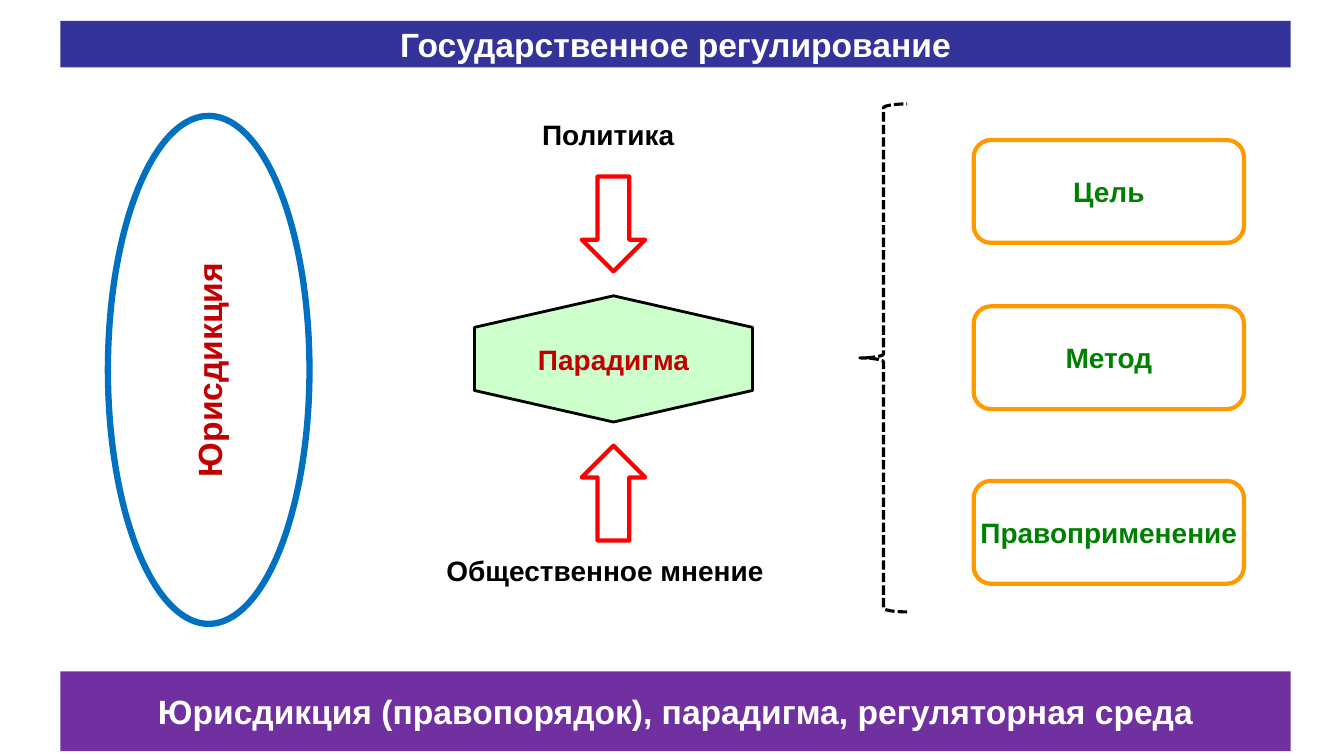
import pptx
import pptx.util
import pptx.dml.color
import pptx.enum.dml
import pptx.enum.shapes
import pptx.enum.text

Cm = pptx.util.Cm
Pt = pptx.util.Pt
Shape = pptx.enum.shapes.MSO_SHAPE
Align = pptx.enum.text.PP_ALIGN
Anchor = pptx.enum.text.MSO_ANCHOR


def color(value):
    return pptx.dml.color.RGBColor.from_string(value)


class SlideBuilder:
    font = "Arial"
    heading_size = 24
    label_size = 20
    crimson = "C00000"
    white = "FFFFFF"
    black = "000000"

    def __init__(self, slide):
        self.slide = slide

    def caption(self, shape, text, size, text_color, align=Align.CENTER, wrap=True):
        frame = shape.text_frame
        frame.text = text
        frame.word_wrap = wrap
        para = frame.paragraphs[0]
        para.alignment = align
        span = para.runs[0]
        span.font.name = self.font
        span.font.size = Pt(size)
        span.font.bold = True
        span.font.color.rgb = color(text_color)

    def shape(self, kind, left, top, width, height, fill=None, line=None,
              weight=1, rotation=0):
        shape = self.slide.shapes.add_shape(
            kind, Cm(left), Cm(top), Cm(width), Cm(height))
        shape.shadow.inherit = False
        shape.rotation = rotation
        if fill:
            shape.fill.solid()
            shape.fill.fore_color.rgb = color(fill)
        else:
            shape.fill.background()
        if line:
            shape.line.color.rgb = color(line)
            shape.line.width = Pt(weight)
        else:
            shape.line.fill.background()
        shape.text_frame.vertical_anchor = Anchor.MIDDLE
        return shape

    def banner(self, text, top, height, fill):
        banner = self.shape(Shape.RECTANGLE, 1.52, top, 31.01, height, fill)
        self.caption(banner, text, self.heading_size, self.white)

    def jurisdiction(self, text):
        oval = self.shape(Shape.OVAL, -1.14, 6.78, 12.8, 5.08,
                          line="0070C0", weight=4.5, rotation=270)
        self.caption(oval, text, self.heading_size, self.crimson)

    def instrument(self, text, top):
        box = self.shape(Shape.FLOWCHART_ALTERNATE_PROCESS, 24.54, top, 6.81, 2.59,
                         line="FF9900", weight=3)
        self.caption(box, text, self.label_size, "008000", wrap=False)

    def paradigm(self, text):
        hexagon = self.shape(Shape.HEXAGON, 13.87, 5.54, 3.18, 7.01,
                             "CCFFCC", self.black, 2, 90)
        self.caption(hexagon, text, self.label_size, self.crimson)
        hexagon.element.txBody.bodyPr.set("vert", "vert270")

    def arrow(self, top, rotation):
        self.shape(Shape.DOWN_ARROW, 14.66, top, 1.6, 2.39,
                   self.white, "FF0000", 3, rotation)

    def brace(self):
        brace = self.shape(Shape.LEFT_BRACE, 21.67, 2.62, 1.19, 12.8,
                           line=self.black, weight=2.25)
        brace.line.dash_style = pptx.enum.dml.MSO_LINE.SQUARE_DOT

    def label(self, text, left, top, width):
        box = self.slide.shapes.add_textbox(Cm(left), Cm(top), Cm(width), Cm(1.12))
        self.caption(box, text, self.label_size, self.black, Align.LEFT)
        box.text_frame.auto_size = pptx.enum.text.MSO_AUTO_SIZE.SHAPE_TO_FIT_TEXT


def main():
    deck = pptx.Presentation()
    deck.slide_width = Cm(33.87)
    deck.slide_height = Cm(19.05)
    page = SlideBuilder(deck.slides.add_slide(deck.slide_layouts[6]))

    page.banner("Государственное регулирование", 0.53, 1.17, "333399")
    page.jurisdiction("Юрисдикция")
    page.banner("Юрисдикция (правопорядок), парадигма, регуляторная среда",
                16.92, 2.01, "7030A0")
    for text, top in (("Цель", 3.53), ("Метод", 7.72), ("Правоприменение", 12.12)):
        page.instrument(text, top)
    page.paradigm("Парадигма")
    for top, rotation in ((4.45, 0), (11.23, 180)):
        page.arrow(top, rotation)
    page.brace()
    page.label("Политика", 13.41, 2.84, 3.99)
    page.label("Общественное мнение", 11, 13.82, 8.94)

    deck.save("out.pptx")


if __name__ == "__main__":
    main()
